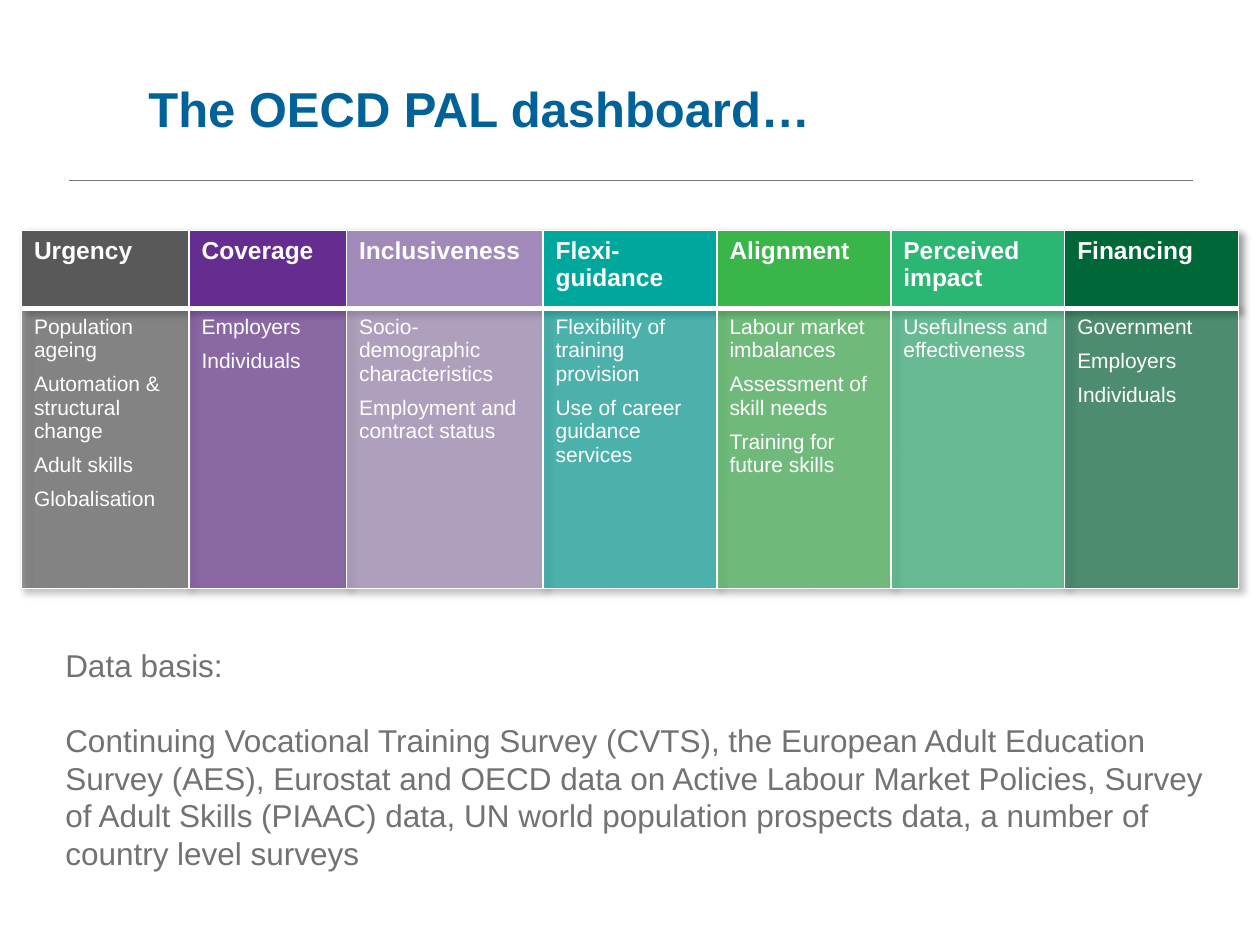
"""Build the OECD PAL dashboard slide."""
from lxml.etree import SubElement
from pptx import Presentation
from pptx.dml.color import RGBColor as RGB
from pptx.enum.shapes import MSO_CONNECTOR as CONNECTOR
from pptx.enum.text import MSO_ANCHOR as ANCHOR
from pptx.oxml import parse_xml
from pptx.oxml.ns import nsdecls, qn
from pptx.util import Inches, Pt

FONT = "Arial"
COLORS = {
    "title": "006299", "text": "727272", "white": "FFFFFF",
    "urgency": "595959", "coverage": "662D91", "inclusiveness": "A18ABA",
    "guidance": "00A79D", "alignment": "39B54A", "impact": "2BB673",
    "financing": "006838",
}
DIMENSIONS = [
    ("Urgency", "urgency", 1.33, ["Population ageing", "Automation & structural change",
                                  "Adult skills", "Globalisation"]),
    ("Coverage", "coverage", 1.25, ["Employers", "Individuals"]),
    ("Inclusiveness", "inclusiveness", 1.56, ["Socio-demographic characteristics",
                                              "Employment and contract status"]),
    ("Flexi-guidance", "guidance", 1.38, ["Flexibility of training provision",
                                          "Use of career guidance services"]),
    ("Alignment", "alignment", 1.38, ["Labour market imbalances", "Assessment of skill needs",
                                      "Training for future skills"]),
    ("Perceived impact", "impact", 1.38, ["Usefulness and effectiveness"]),
    ("Financing", "financing", 1.38, ["Government", "Employers", "Individuals"]),
]
DATA_BASIS = [
    "Data basis:",
    "Continuing Vocational Training Survey (CVTS), the European Adult Education Survey (AES), "
    "Eurostat and OECD data on Active Labour Market Policies, Survey of Adult Skills (PIAAC) "
    "data, UN world population prospects data, a number of country level surveys",
]


def write(frame, lines, size, color, bold=False, after=0, before=0):
    frame.word_wrap = True
    for i, line in enumerate(lines):
        paragraph = frame.add_paragraph() if i else frame.paragraphs[0]
        paragraph.text = line
        paragraph.space_after = Pt(after)
        paragraph.space_before = Pt(before if i else 0)
        font = paragraph.font
        font.name, font.size, font.bold = FONT, Pt(size), bold
        font.color.rgb = RGB.from_string(COLORS[color])


def paint(cell, color, opacity, top, bottom):
    cell.fill.solid()
    cell.fill.fore_color.rgb = RGB.from_string(COLORS[color])
    properties = cell._tc.get_or_add_tcPr()
    if opacity < 100:
        shade = properties.find(".//" + qn("a:srgbClr"))
        SubElement(shade, qn("a:alpha"), val=str(opacity * 1000))
    sides = [("L", 1), ("R", 1), ("T", top), ("B", bottom)]
    for i, (side, width) in enumerate(sides):
        properties.insert(i, parse_xml(
            f'<a:ln{side} {nsdecls("a")} w="{Pt(width)}"><a:solidFill>'
            f'<a:srgbClr val="{COLORS["white"]}"/></a:solidFill></a:ln{side}>'))


prs = Presentation()
prs.slide_width, prs.slide_height = Inches(10), Inches(7.5)
slide = prs.slides.add_slide(prs.slide_layouts[6])

rule = slide.shapes.add_connector(
    CONNECTOR.STRAIGHT, Inches(0.55), Inches(1.43), Inches(9.47), Inches(1.43))
rule.line.color.rgb = RGB.from_string(COLORS["text"])
rule.line.width = Pt(0.5)
SubElement(rule._element.spPr, qn("a:effectLst"))

title = slide.shapes.add_textbox(Inches(1.08), Inches(0.3), Inches(9.17), Inches(1.12))
title.text_frame.vertical_anchor = ANCHOR.MIDDLE
write(title.text_frame, ["The OECD PAL dashboard…"], 28, "title", bold=True)

dashboard = slide.shapes.add_table(
    2, len(DIMENSIONS), Inches(0.17), Inches(1.83), Inches(9.66), Inches(2.84)).table
dashboard.first_row = dashboard.horz_banding = False
dashboard._tbl.tblPr.insert(0, parse_xml(
    f'<a:effectLst {nsdecls("a")}><a:outerShdw blurRad="50800" dist="38100" dir="2700000" '
    'algn="tl" rotWithShape="0"><a:srgbClr val="000000"><a:alpha val="40000"/></a:srgbClr>'
    '</a:outerShdw></a:effectLst>'))
for row, height in zip(dashboard.rows, (0.62, 2.22)):
    row.height = Inches(height)
for col, (heading, color, width, indicators) in enumerate(DIMENSIONS):
    dashboard.columns[col].width = Inches(width)
    header, body = dashboard.cell(0, col), dashboard.cell(1, col)
    write(header.text_frame, [heading], 14, "white", bold=True)
    write(body.text_frame, indicators, 12, "white", after=6)
    paint(header, color, 100, top=1, bottom=3)
    paint(body, color, 60, top=3, bottom=1)

data_basis = slide.shapes.add_textbox(Inches(0.42), Inches(5.08), Inches(9.33), Inches(1.92))
write(data_basis.text_frame, DATA_BASIS, 18, "text", before=21)

prs.save("out.pptx")
